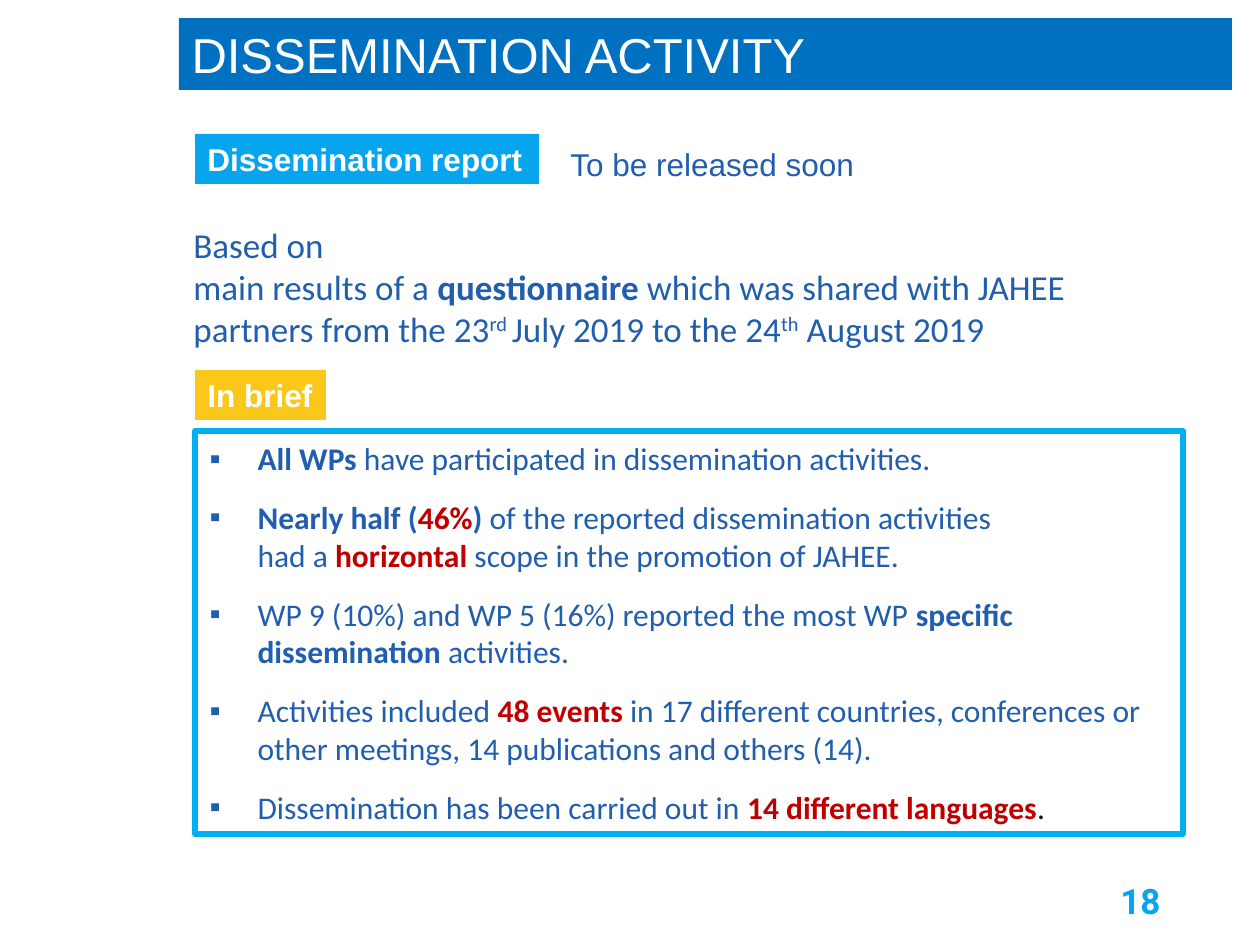
from dataclasses import dataclass

from pptx import Presentation
from pptx.dml.color import RGBColor as Rgb
from pptx.enum.shapes import MSO_SHAPE as Shape
from pptx.enum.text import MSO_ANCHOR as Anchor, MSO_AUTO_SIZE as Fit, PP_ALIGN as Align
from pptx.oxml.ns import qn
from pptx.util import Emu, Pt
from lxml.etree import SubElement as Sub


@dataclass(frozen=True)
class Theme:
    text: str = "215EAE"
    red: str = "C00000"
    dark: str = "0D0D0D"
    white: str = "FFFFFF"
    banner: str = "0070C0"
    sky: str = "08A5EF"
    frame: str = "00B0F0"
    gold: str = "FAC81A"
    sans: str = "Arial"
    body: str = "Calibri"
    num: str = "Roboto"
    head: int = 28
    lead: int = 20
    base: int = 18
    gap: int = 12


T = Theme()

# Run marks: colour, bold, raised
PLAIN = (T.text, False, False)
BOLD = (T.text, True, False)
HOT = (T.red, True, False)
SUP = (T.text, False, True)
DARK = (T.dark, False, False)
LIGHT = (T.white, False, False)
LABEL = (T.white, True, False)
PAGE = (T.sky, True, False)

INTRO = [
    [("Based on", PLAIN)],
    [("main results of a ", PLAIN), ("questionnaire ", BOLD),
     ("which was shared with JAHEE partners from the 23", PLAIN),
     ("rd ", SUP), ("July 2019 to the 24", PLAIN), ("th", SUP),
     (" August 2019", PLAIN)],
]

BRIEF = [
    [("All WPs ", BOLD),
     ("have participated in dissemination activities.", PLAIN)],
    [("Nearly half (", BOLD), ("46%", HOT), (") ", BOLD),
     ("of the reported dissemination activities \nhad a ", PLAIN),
     ("horizontal ", HOT), ("scope in the promotion of JAHEE.", PLAIN)],
    [("WP 9 (10%) and WP 5 (16%) reported the most WP ", PLAIN),
     ("specific dissemination", BOLD), (" activities.", PLAIN)],
    [("Activities included ", PLAIN), ("48 events ", HOT),
     ("in 17 different countries, conferences or other meetings, "
      "14 publications and others (14).", PLAIN)],
    [("Dissemination has been carried out in ", PLAIN),
     ("14 different languages", HOT), (".", DARK)],
]


def px(n):
    return Emu(round(n * 914400 / 126))


def place(shape, box):
    shape.left, shape.top, shape.width, shape.height = map(px, box)


def paint(shape, color):
    shape.fill.solid()
    shape.fill.fore_color.rgb = Rgb.from_string(color)


def add_run(para, text, mark, font, size):
    color, bold, raised = mark
    for i, part in enumerate(text.split("\n")):
        if i:
            para.add_line_break()
        run = para.add_run()
        run.text = part
        run.font.name, run.font.size, run.font.bold = font, Pt(size), bold
        run.font.color.rgb = Rgb.from_string(color)
        if raised:
            run.font._element.set("baseline", "30000")


def bullet(para):
    props = para._p.get_or_add_pPr()
    props.set("marL", str(px(50)))
    props.set("indent", str(-px(48)))
    Sub(props, qn("a:buFont")).set("typeface", T.sans)
    Sub(props, qn("a:buChar")).set("char", "▪")


def write(shape, paras, font, size, wrap=True, anchor=Anchor.TOP,
          align=Align.LEFT, gap=0, dots=False):
    frame = shape.text_frame
    frame.auto_size, frame.word_wrap = Fit.NONE, wrap
    frame.vertical_anchor = anchor
    for i, runs in enumerate(paras):
        para = frame.add_paragraph() if i else frame.paragraphs[0]
        if dots:
            bullet(para)
        para.alignment = align
        para.space_before = Pt(gap if i else 0)
        for text, mark in runs:
            add_run(para, text, mark, font, size)


def add_text(slide, box, paras, font, size, **opts):
    write(slide.shapes.add_textbox(*map(px, box)), paras, font, size, **opts)


def add_label(slide, box, text, color):
    tag = slide.shapes.add_shape(Shape.RECTANGLE, *map(px, box))
    tag.shadow.inherit = False
    tag.line.fill.background()
    paint(tag, color)
    write(tag, [[(text, LABEL)]], T.sans, T.base, wrap=False)


def main():
    deck = Presentation()
    deck.slide_width, deck.slide_height = px(1260), px(945)
    slide = deck.slides.add_slide(deck.slide_layouts[1])

    # Title banner
    title = slide.shapes.title
    place(title, (179, 18, 1053, 72))
    paint(title, T.banner)
    write(title, [[("DISSEMINATION ACTIVITY", LIGHT)]], T.sans, T.head)

    # Report label and its status
    add_label(slide, (195, 134, 344, 50), "Dissemination report", T.sky)
    add_text(slide, (558, 139, 315, 50), [[("To be released soon", PLAIN)]],
             T.sans, T.base, wrap=False)

    # Basis of the report
    add_text(slide, (181, 217, 1014, 140), INTRO, T.body, T.lead)

    # Framed summary
    add_label(slide, (195, 370, 131, 50), "In brief", T.gold)
    brief = slide.placeholders[1]
    place(brief, (195, 431, 988, 403))
    brief.line.color.rgb = Rgb.from_string(T.frame)
    brief.line.width = Pt(3)
    write(brief, BRIEF, T.body, T.base, anchor=Anchor.MIDDLE,
          gap=T.gap, dots=True)

    # Page number
    add_text(slide, (890, 876, 283, 50), [[("18", PAGE)]], T.num, T.lead,
             anchor=Anchor.MIDDLE, align=Align.RIGHT)

    deck.save("out.pptx")


if __name__ == "__main__":
    main()
